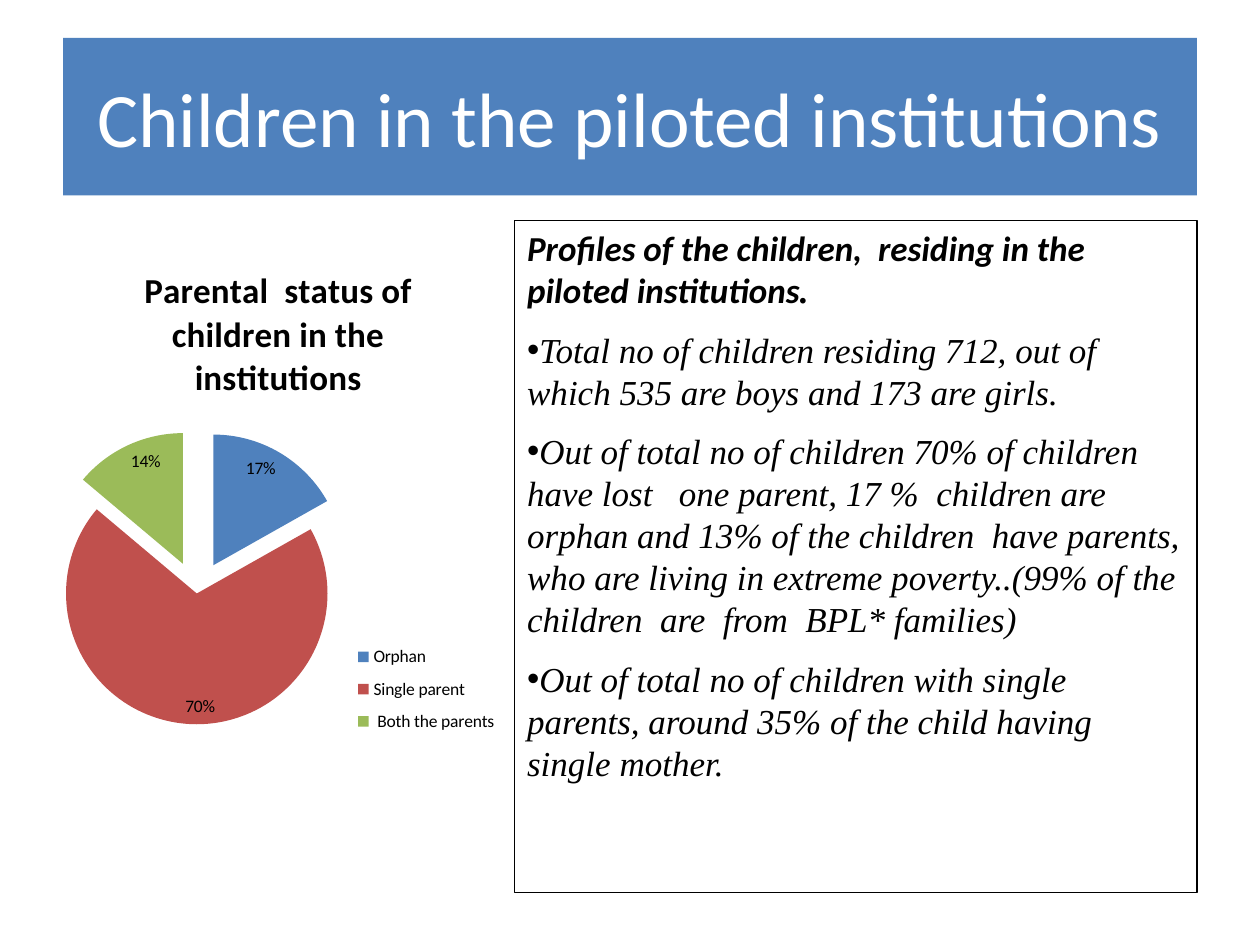
from lxml import etree
from pptx import Presentation
from pptx.chart.data import CategoryChartData
from pptx.dml.color import RGBColor
from pptx.enum.chart import XL_CHART_TYPE, XL_LABEL_POSITION, XL_LEGEND_POSITION
from pptx.enum.text import MSO_ANCHOR, MSO_AUTO_SIZE, PP_ALIGN
from pptx.oxml.ns import qn
from pptx.util import Pt

PIE = XL_CHART_TYPE.PIE
INSIDE_END = XL_LABEL_POSITION.INSIDE_END
LEGEND_RIGHT = XL_LEGEND_POSITION.RIGHT
MIDDLE, TOP = MSO_ANCHOR.MIDDLE, MSO_ANCHOR.TOP
NO_FIT = MSO_AUTO_SIZE.NONE
CENTER, LEFT = PP_ALIGN.CENTER, PP_ALIGN.LEFT

COLORS = {"blue": "4F81BD", "red": "C0504D", "green": "9BBB59",
          "black": "000000", "white": "FFFFFF"}
SANS, SERIF = "Calibri", "Times New Roman"

PARENTS = [("Orphan", 17, "blue", 25), ("Single parent", 70, "red", 0),
           (" Both the parents", 14, "green", 25)]
HEADING = "Profiles of the children,  residing in the piloted institutions"
FACTS = [
    "Total no of children residing 712, out of which 535 are boys and 173 are girls.",
    "Out of total no of children 70% of children have lost   one parent, 17 %  children "
    "are orphan and 13% of the children  have parents, who are living in extreme "
    "poverty..(99% of the children  are  from  BPL* families)",
    "Out of total no of children with single parents, around 35% of the child having "
    "single mother.",
]


def color(name):
    return RGBColor.from_string(COLORS[name])


def set_font(font, name, size, ink="black", bold=False, italic=False):
    font.name, font.size = name, Pt(size)
    font.bold, font.italic = bold, italic
    font.color.rgb = color(ink)


def place(shape, box):
    shape.left, shape.top, shape.width, shape.height = (Pt(length) for length in box)


def fill(shape, name):
    shape.fill.solid()
    shape.fill.fore_color.rgb = color(name)


def add_title(page, box):
    title = page.shapes.title
    place(title, box)
    fill(title, "blue")
    frame = title.text_frame
    frame.auto_size, frame.vertical_anchor = NO_FIT, MIDDLE
    frame.text = "Children in the piloted institutions"
    para = frame.paragraphs[0]
    para.alignment = CENTER
    set_font(para.font, SANS, 44, "white")


def set_layout(parent, x, y, w, h, inner=False):
    """Place a chart part by fractions of the chart area."""
    for old in parent.findall(qn("c:layout")):
        parent.remove(old)
    layout = etree.Element(qn("c:layout"))
    manual = etree.SubElement(layout, qn("c:manualLayout"))
    values = [("layoutTarget", "inner")] if inner else []
    values += [("xMode", "edge"), ("yMode", "edge"),
               ("x", x), ("y", y), ("w", w), ("h", h)]
    for tag, value in values:
        etree.SubElement(manual, qn(f"c:{tag}")).set("val", str(value))
    position = parent.find(qn("c:legendPos"))
    parent.insert(0 if position is None else 1, layout)


def add_parent_chart(page, box):
    data = CategoryChartData(number_format='0"%"')
    data.categories = [row[0] for row in PARENTS]
    data.add_series("Series 1", [row[1] for row in PARENTS])
    chart = page.shapes.add_chart(PIE, *(Pt(length) for length in box), data).chart
    set_font(chart.font, SANS, 10)

    chart.has_title = True
    chart.chart_title.include_in_layout = False
    frame = chart.chart_title.text_frame
    frame.text = "Parental  status of children in the institutions"
    set_font(frame.paragraphs[0].font, SANS, 20, bold=True)

    chart.has_legend = True
    legend = chart.legend
    legend.position, legend.include_in_layout = LEGEND_RIGHT, False
    set_layout(legend._element, 0.62, 0.72, 0.36, 0.2)

    plot = chart.plots[0]
    plot.vary_by_categories = True
    plot.has_data_labels = True
    labels = plot.data_labels
    labels.show_value, labels.position = True, INSIDE_END
    labels.number_format, labels.number_format_is_linked = '0"%"', False
    set_layout(chart._chartSpace.chart.plotArea, 0.07, 0.4, 0.53, 0.49, inner=True)

    for index, (_, _, shade, offset) in enumerate(PARENTS):
        point = plot.series[0].points[index]
        fill(point.format, shade)
        explosion = etree.Element(qn("c:explosion"))
        explosion.set("val", str(offset))
        point.format._element.find(qn("c:spPr")).addprevious(explosion)


def set_bullet(para):
    properties = para._p.get_or_add_pPr()
    etree.SubElement(properties, qn("a:buFont")).set("typeface", "Arial")
    etree.SubElement(properties, qn("a:buChar")).set("char", "•")


def add_profile(page, box):
    body = page.placeholders[1]
    place(body, box)
    fill(body, "white")
    body.line.color.rgb = color("black")
    body.line.width = Pt(0.75)
    frame = body.text_frame
    frame.auto_size, frame.vertical_anchor = NO_FIT, TOP
    frame.word_wrap = True

    for index, text in enumerate([HEADING, *FACTS]):
        para = frame.add_paragraph() if index else frame.paragraphs[0]
        para.alignment = LEFT
        para.line_spacing = Pt(24)
        para.space_before, para.space_after = Pt(0), Pt(10)
        properties = para._p.get_or_add_pPr()
        properties.set("marL", "0")
        properties.set("indent", "0")
        if index:
            set_bullet(para)
        else:
            etree.SubElement(properties, qn("a:buNone"))
        para.add_run().text = text
        set_font(para.font, SERIF if index else SANS, 20, bold=not index, italic=True)
    stop = frame.paragraphs[0].add_run()
    stop.text = "."
    stop.font.name = SERIF


def main():
    deck = Presentation()
    deck.slide_width, deck.slide_height = Pt(720), Pt(540)
    page = deck.slides.add_slide(deck.slide_layouts[1])
    add_title(page, (36, 21.6, 648, 90))
    add_parent_chart(page, (18, 138, 282, 312))
    add_profile(page, (294, 126, 390, 384))
    deck.save("out.pptx")


if __name__ == "__main__":
    main()
